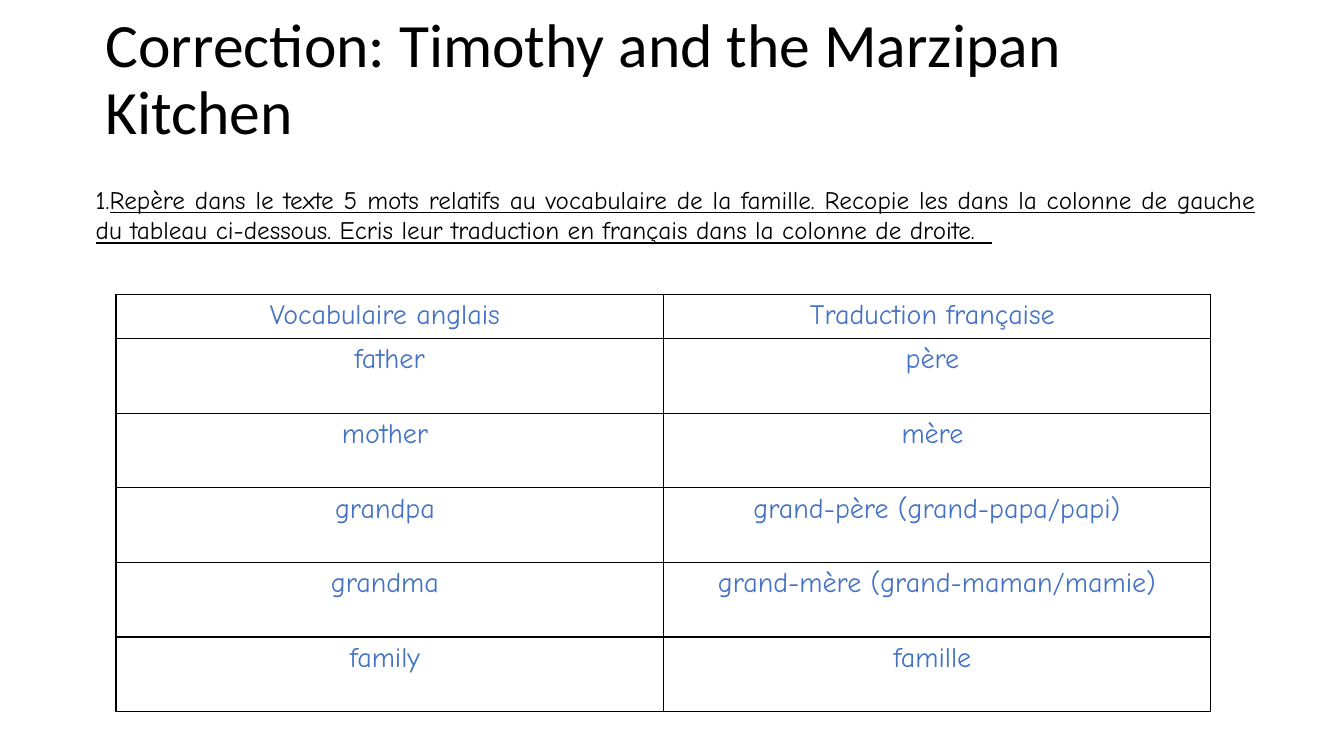
from dataclasses import dataclass

from lxml import etree
from pptx import Presentation
from pptx.dml.color import RGBColor
from pptx.enum import text
from pptx.oxml import ns
from pptx.util import Inches, Pt


@dataclass(frozen=True)
class Theme:
    ink: RGBColor = RGBColor(0x00, 0x00, 0x00)
    answer: RGBColor = RGBColor(0x44, 0x72, 0xC4)
    heading_font: str = "Calibri"
    body_font: str = "Comic Neue"
    heading_size: int = 44
    question_size: int = 18
    answer_size: int = 20
    border_width: int = 1


@dataclass(frozen=True)
class Box:
    left: float
    top: float
    width: float
    height: float

    def inches(self) -> tuple:
        return tuple(Inches(n) for n in (self.left, self.top, self.width, self.height))


@dataclass(frozen=True)
class Word:
    english: str
    french: str


THEME = Theme()
HEADING_BOX = Box(0.95, 0.42, 11.5, 0.77)
QUESTION_BOX = Box(0.95, 1.67, 11.5, 1.04)
VOCABULARY_BOX = Box(1.15, 2.92, 10.86, 4.14)
HEADER_HEIGHT = 0.44
WORD_HEIGHT = 0.74

HEADING = "Correction: Timothy and the Marzipan Kitchen"
QUESTION = (
    "Repère dans le texte 5 mots relatifs au vocabulaire de la famille. "
    "Recopie les dans la colonne de gauche du tableau ci-dessous. "
    "Ecris leur traduction en français dans la colonne de droite.  "
)
VOCABULARY = [
    Word("Vocabulaire anglais ", "Traduction française "),
    Word("father", "père "),
    Word("mother ", "mère "),
    Word("grandpa ", "grand-père (grand-papa/papi)"),
    Word("grandma ", "grand-mère (grand-maman/mamie)"),
    Word("family ", "famille "),
]


def write(paragraph, wording: str, font: str, size: int, color: RGBColor, underline: bool = False) -> None:
    run = paragraph.add_run()
    run.text = wording
    run.font.name = font
    run.font.size = Pt(size)
    run.font.color.rgb = color
    if underline:
        run.font.underline = True


def add_heading(slide) -> None:
    frame = slide.shapes.add_textbox(*HEADING_BOX.inches()).text_frame
    frame.word_wrap = True
    frame.vertical_anchor = text.MSO_ANCHOR.MIDDLE
    line = frame.paragraphs[0]
    line.line_spacing = 0.9
    write(line, HEADING, THEME.heading_font, THEME.heading_size, THEME.ink)


def add_question(slide) -> None:
    frame = slide.shapes.add_textbox(*QUESTION_BOX.inches()).text_frame
    frame.word_wrap = True
    frame.margin_left = frame.margin_right = frame.margin_bottom = 0
    frame.margin_top = Inches(0.16)
    frame.vertical_anchor = text.MSO_ANCHOR.TOP
    item = frame.paragraphs[0]
    item.alignment = text.PP_ALIGN.JUSTIFY
    write(item, QUESTION, THEME.body_font, THEME.question_size, THEME.ink, underline=True)
    properties = item._p.get_or_add_pPr()
    properties.set("marL", "0")
    properties.set("indent", "0")
    etree.SubElement(properties, ns.qn("a:buAutoNum"), type="arabicPeriod")


def outline(cell) -> None:
    properties = cell._tc.get_or_add_tcPr()
    for position, side in enumerate(("a:lnL", "a:lnR", "a:lnT", "a:lnB")):
        border = etree.Element(ns.qn(side), w=str(Pt(THEME.border_width)))
        fill = etree.SubElement(border, ns.qn("a:solidFill"))
        etree.SubElement(fill, ns.qn("a:srgbClr"), val=str(THEME.ink))
        properties.insert(position, border)


def add_vocabulary(slide) -> None:
    table = slide.shapes.add_table(len(VOCABULARY), 2, *VOCABULARY_BOX.inches()).table
    table.first_row = False
    table.horz_banding = False
    for index, word in enumerate(VOCABULARY):
        table.rows[index].height = Inches(WORD_HEIGHT if index else HEADER_HEIGHT)
        for column, wording in enumerate((word.english, word.french)):
            cell = table.cell(index, column)
            cell.fill.background()
            outline(cell)
            entry = cell.text_frame.paragraphs[0]
            entry.alignment = text.PP_ALIGN.CENTER
            write(entry, wording, THEME.body_font, THEME.answer_size, THEME.answer)


def main() -> None:
    deck = Presentation()
    deck.slide_width = Inches(13.33)
    deck.slide_height = Inches(7.5)
    slide = deck.slides.add_slide(deck.slide_layouts[6])
    add_heading(slide)
    add_vocabulary(slide)
    add_question(slide)
    deck.save("out.pptx")


if __name__ == "__main__":
    main()
